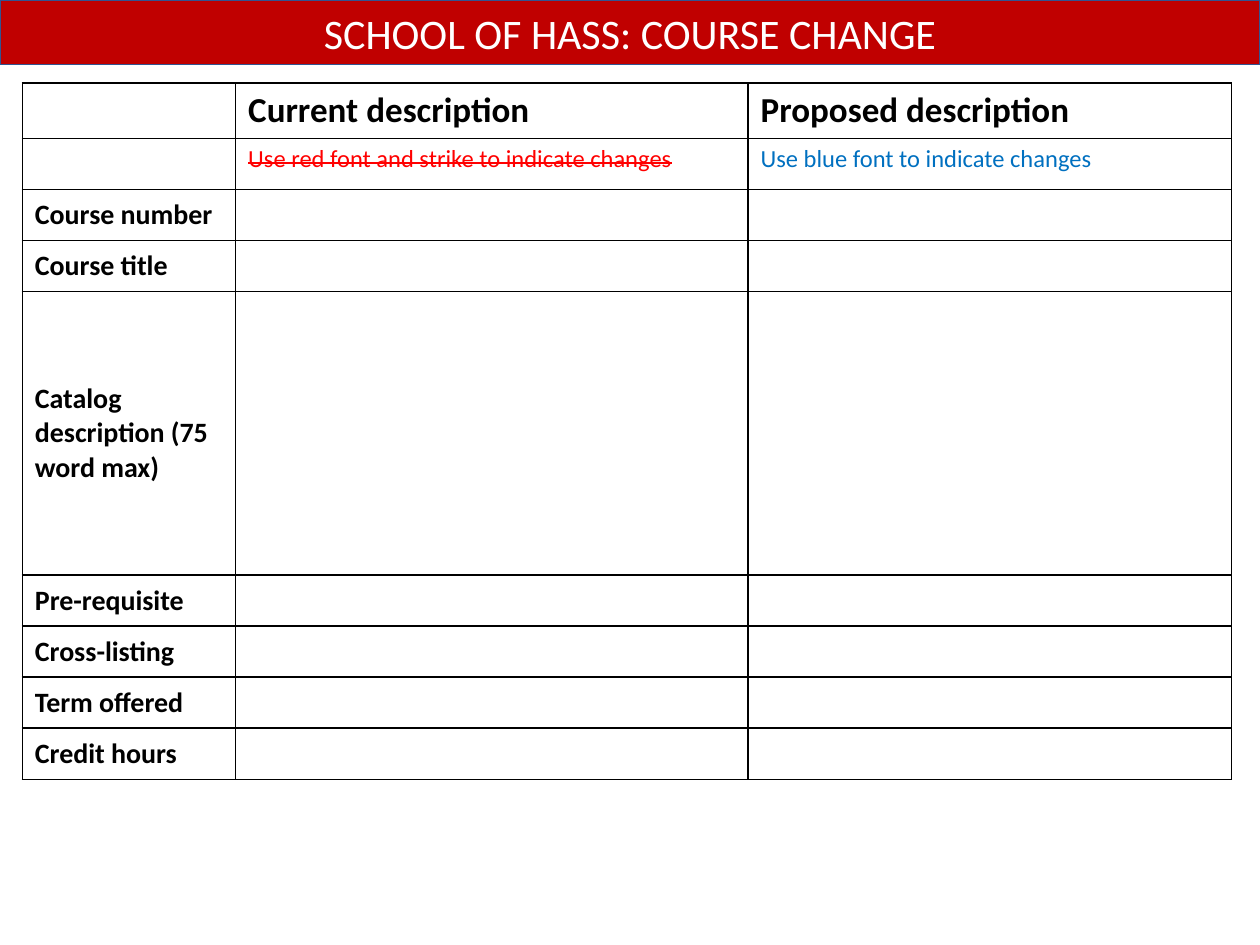
"""Build the course change form slide."""
import dataclasses
import typing

import lxml.etree
import pptx
import pptx.dml.color
import pptx.enum.text
import pptx.oxml.ns
import pptx.util

Cm = pptx.util.Cm
Pt = pptx.util.Pt
ANCHOR = pptx.enum.text.MSO_ANCHOR
HUES = {
    "banner": "C00000",
    "edge": "325491",
    "white": "FFFFFF",
    "black": "000000",
    "red": "FF0000",
    "blue": "0070C0",
}


@dataclasses.dataclass(frozen=True)
class Style:
    size: int
    hue: str
    bold: bool = False
    strike: bool = False
    anchor: typing.Any = ANCHOR.TOP


@dataclasses.dataclass(frozen=True)
class Entry:
    row: int
    col: int
    text: str
    style: Style


TITLE = Style(24, "white", anchor=ANCHOR.MIDDLE)
HEAD = Style(20, "black", bold=True)
OLD = Style(14, "red", strike=True)
NEW = Style(14, "blue")
LABEL = Style(16, "black", bold=True, anchor=ANCHOR.MIDDLE)
LABELS = (
    "Course number",
    "Course title",
    "Catalog description (75 word max)",
    "Pre-requisite",
    "Cross-listing",
    "Term offered",
    "Credit hours",
)
ENTRIES = [
    Entry(0, 1, "Current description", HEAD),
    Entry(0, 2, "Proposed description", HEAD),
    Entry(1, 1, "Use red font and strike to indicate changes", OLD),
    Entry(1, 2, "Use blue font to indicate changes", NEW),
    *(Entry(row, 0, text, LABEL) for row, text in enumerate(LABELS, 2)),
]
WIDTHS = (4.3, 10.33, 9.75)
HEIGHTS = (1.1, 1.02, 1.02, 1.02, 5.71, 1.02, 1.02, 1.02, 1.02)


def color(hue: str) -> pptx.dml.color.RGBColor:
    """Return the named colour."""
    return pptx.dml.color.RGBColor.from_string(HUES[hue])


def assign(target: typing.Any, values: dict) -> None:
    """Set each named value on the target."""
    for name, value in values.items():
        setattr(target, name, value)


def write(frame: typing.Any, text: str, style: Style) -> None:
    """Write one styled run into a text frame."""
    run = frame.paragraphs[0].add_run()
    run.text = text
    assign(run.font, {"name": "Calibri", "size": Pt(style.size), "bold": style.bold})
    run.font.color.rgb = color(style.hue)
    if style.strike:
        run.font._element.set("strike", "sngStrike")


def border(cell: typing.Any) -> None:
    """Give a cell thin black borders and no fill."""
    props = cell._tc.get_or_add_tcPr()
    tag = pptx.oxml.ns.qn
    for side in ("L", "R", "T", "B"):
        line = lxml.etree.SubElement(props, tag(f"a:ln{side}"), w=str(Pt(1)))
        fill = lxml.etree.SubElement(line, tag("a:solidFill"))
        lxml.etree.SubElement(fill, tag("a:srgbClr"), val=HUES["black"])
    cell.fill.background()


def banner(slide: typing.Any, text: str) -> None:
    """Turn the title placeholder into the top banner."""
    title = slide.shapes.title
    assign(title, {"left": 0, "top": 0, "width": Cm(25.4), "height": Cm(1.3)})
    title.fill.solid()
    title.fill.fore_color.rgb = color("banner")
    title.line.color.rgb = color("edge")
    title.line.width = Pt(1)
    frame = title.text_frame
    assign(frame, {
        "word_wrap": True,
        "auto_size": pptx.enum.text.MSO_AUTO_SIZE.NONE,
        "vertical_anchor": TITLE.anchor,
    })
    frame.paragraphs[0].alignment = pptx.enum.text.PP_ALIGN.CENTER
    write(frame, text, TITLE)


def form(slide: typing.Any) -> None:
    """Draw the form table and its entries."""
    table = slide.shapes.add_table(
        len(HEIGHTS), len(WIDTHS), Cm(0.45), Cm(1.67),
        Cm(sum(WIDTHS)), Cm(sum(HEIGHTS)),
    ).table
    assign(table, {"first_row": False, "horz_banding": False})
    for col, width in zip(table.columns, WIDTHS):
        col.width = Cm(width)
    for row, height in zip(table.rows, HEIGHTS):
        row.height = Cm(height)
    for cell in table.iter_cells():
        border(cell)
    for entry in ENTRIES:
        cell = table.cell(entry.row, entry.col)
        cell.vertical_anchor = entry.style.anchor
        write(cell.text_frame, entry.text, entry.style)


def main() -> None:
    """Build and save the deck."""
    deck = pptx.Presentation()
    assign(deck, {"slide_width": Cm(25.4), "slide_height": Cm(19.05)})
    slide = deck.slides.add_slide(deck.slide_layouts.get_by_name("Title Only"))
    banner(slide, "SCHOOL OF HASS: COURSE CHANGE")
    form(slide)
    deck.save("out.pptx")


if __name__ == "__main__":
    main()
